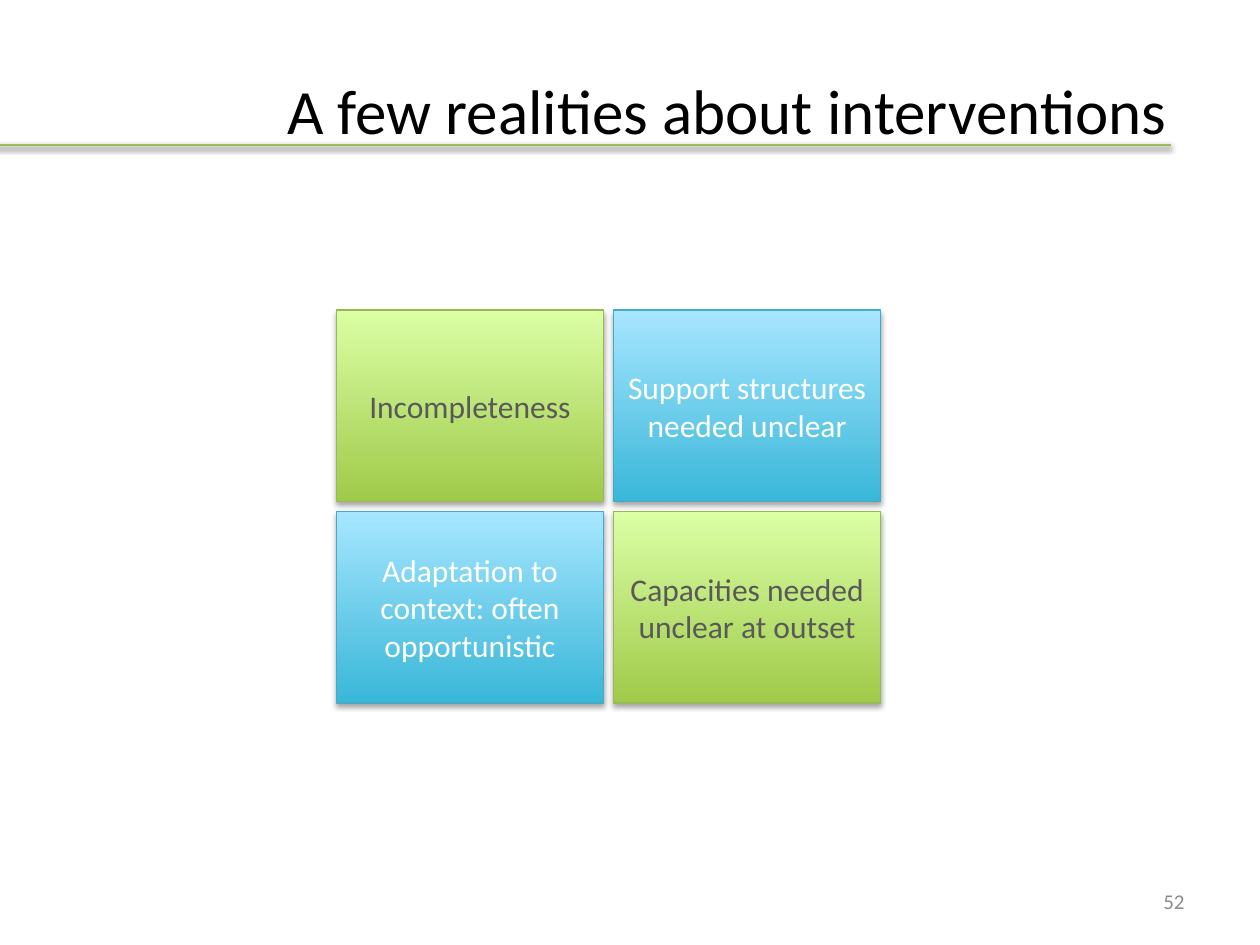
from pptx import Presentation
from pptx import util as u
from pptx.dml import color
from pptx.enum import shapes, text
from pptx.oxml import ns, parse_xml

BLACK = color.RGBColor(0x00, 0x00, 0x00)
WHITE = color.RGBColor(0xFF, 0xFF, 0xFF)
DARK_GREY = color.RGBColor(0x59, 0x59, 0x59)
PAGE_GREY = color.RGBColor(0x8C, 0x8C, 0x8C)
RULE_GREEN = color.RGBColor(0x9B, 0xBB, 0x59)
GREEN_DEEP = color.RGBColor(0xA0, 0xCA, 0x4A)
GREEN_PALE = color.RGBColor(0xDA, 0xFF, 0xA5)
GREEN_EDGE = color.RGBColor(0x98, 0xB9, 0x55)
BLUE_DEEP = color.RGBColor(0x39, 0xB7, 0xD8)
BLUE_PALE = color.RGBColor(0xA7, 0xE6, 0xFF)
BLUE_EDGE = color.RGBColor(0x46, 0xAA, 0xC5)

GREEN = (GREEN_DEEP, GREEN_PALE, GREEN_EDGE, DARK_GREY)
BLUE = (BLUE_DEEP, BLUE_PALE, BLUE_EDGE, WHITE)


def write(box, words, size, ink, align):
    frame = box.text_frame
    frame.word_wrap = True
    frame.vertical_anchor = text.MSO_ANCHOR.MIDDLE
    para = frame.paragraphs[0]
    para.alignment = align
    span = para.add_run()
    span.text = words
    span.font.name = "Calibri"
    span.font.size = u.Pt(size)
    span.font.color.rgb = ink


def add_shadow(item, distance, opacity):
    item._element.spPr.append(parse_xml(
        f'<a:effectLst {ns.nsdecls("a")}>'
        f'<a:outerShdw blurRad="{u.Pt(3.1)}" dist="{u.Pt(distance)}" dir="5400000" rotWithShape="0">'
        f'<a:srgbClr val="{BLACK}"><a:alpha val="{opacity * 1000}"/></a:srgbClr>'
        '</a:outerShdw></a:effectLst>'))


deck = Presentation()
deck.slide_width = u.Inches(10)
deck.slide_height = u.Inches(7.5)
page = deck.slides.add_slide(deck.slide_layouts[5])

title = page.shapes.title
title.left, title.top = u.Inches(0.5), u.Inches(0.42)
title.width, title.height = u.Inches(8.86), u.Inches(0.89)
write(title, "A few realities about interventions", 36, BLACK, text.PP_ALIGN.RIGHT)

tiles = [
    ("Incompleteness", GREEN),
    ("Support structures needed unclear", BLUE),
    ("Adaptation to context: often opportunistic", BLUE),
    ("Capacities needed unclear at outset", GREEN),
]
tile_width, tile_height, gap = 2.12, 1.52, 0.08
for index, (words, (deep, pale, edge, ink)) in enumerate(tiles):
    row, column = divmod(index, 2)
    tile = page.shapes.add_shape(
        shapes.MSO_SHAPE.RECTANGLE,
        u.Inches(2.67 + column * (tile_width + gap)),
        u.Inches(2.46 + row * (tile_height + gap)),
        u.Inches(tile_width), u.Inches(tile_height))
    tile.fill.gradient()
    tile.fill.gradient_angle = 90
    for stop, tone in zip(tile.fill.gradient_stops, (deep, pale)):
        stop.color.rgb = tone
    tile.line.color.rgb = edge
    tile.line.width = u.Pt(0.75)
    add_shadow(tile, 1.8, 35)
    write(tile, words, 18, ink, text.PP_ALIGN.CENTER)

rule = page.shapes.add_connector(
    shapes.MSO_CONNECTOR.STRAIGHT,
    u.Inches(9.29), u.Inches(1.15), u.Inches(-0.26), u.Inches(1.15))
rule.line.color.rgb = RULE_GREEN
rule.line.width = u.Pt(1.5)
add_shadow(rule, 1.6, 38)

page_number = page.shapes.add_textbox(
    u.Inches(7.17), u.Inches(6.95), u.Inches(2.33), u.Inches(0.4))
write(page_number, "52", 12, PAGE_GREY, text.PP_ALIGN.RIGHT)

deck.save("out.pptx")
